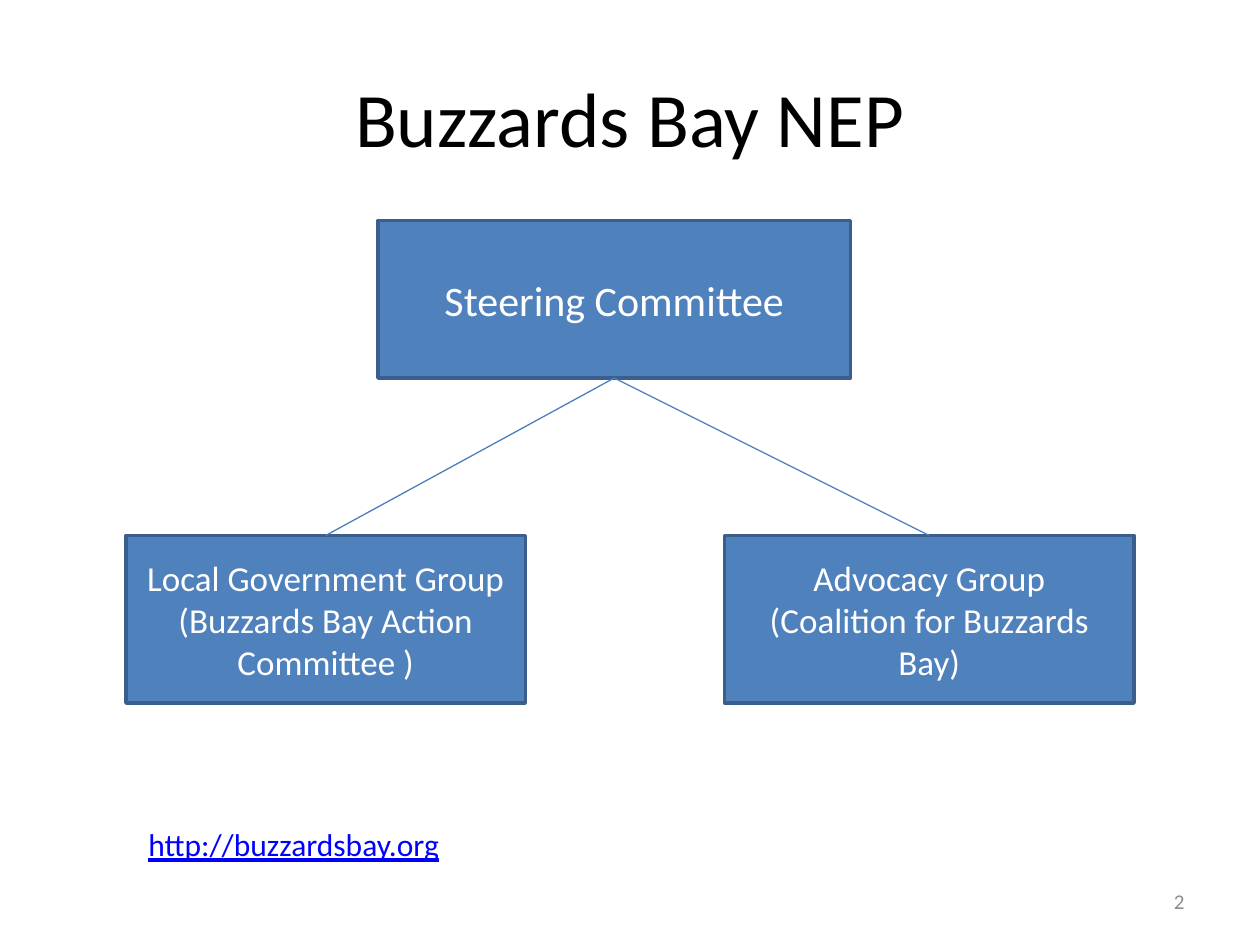
import dataclasses

import lxml.etree
import pptx
import pptx.dml.color
import pptx.enum.shapes
import pptx.enum.text
import pptx.oxml.ns
import pptx.shapes.autoshape
import pptx.slide
import pptx.util

EMU_PER_PX = 9144  # 100 px to the inch
ALIGN = pptx.enum.text.PP_ALIGN
ANCHOR = pptx.enum.text.MSO_ANCHOR
BOTTOM_SITE, TOP_SITE = 2, 0


@dataclasses.dataclass(frozen=True)
class Bounds:
    left: int
    top: int
    width: int
    height: int


@dataclasses.dataclass(frozen=True)
class Group:
    bounds: Bounds
    lines: tuple[str, ...]
    size: int


STEERING = Group(Bounds(300, 175, 375, 125), ("Steering Committee",), 24)
MEMBERS = (
    Group(Bounds(100, 425, 317, 133),
          ("Local Government Group", "(Buzzards Bay Action Committee )"), 20),
    Group(Bounds(575, 425, 325, 133),
          ("Advocacy Group", "(Coalition for Buzzards Bay)"), 20),
)


def px(length: int) -> pptx.util.Emu:
    return pptx.util.Emu(length * EMU_PER_PX)


def color(value: str) -> pptx.dml.color.RGBColor:
    return pptx.dml.color.RGBColor.from_string(value)


def place(bounds: Bounds) -> dict[str, pptx.util.Emu]:
    return {name: px(length) for name, length in dataclasses.asdict(bounds).items()}


def apply(target: object, values: dict) -> None:
    for name, value in values.items():
        setattr(target, name, value)


def write(shape, lines: tuple[str, ...], size: int, fill: str,
          align=ALIGN.CENTER, anchor=ANCHOR.MIDDLE, wrap: bool = True,
          underline: bool = False) -> None:
    frame = shape.text_frame
    apply(frame, {"text": "\n".join(lines), "word_wrap": wrap, "vertical_anchor": anchor})
    font_format = {"name": "Calibri", "size": pptx.util.Pt(size), "underline": underline}
    for paragraph in frame.paragraphs:
        paragraph.alignment = align
        for run in paragraph.runs:
            apply(run.font, font_format)
            run.font.color.rgb = color(fill)


def add_group(slide: pptx.slide.Slide, group: Group) -> pptx.shapes.autoshape.Shape:
    shape = slide.shapes.add_shape(
        pptx.enum.shapes.MSO_SHAPE.RECTANGLE, **place(group.bounds))
    shape.shadow.inherit = False
    shape.fill.solid()
    shape.fill.fore_color.rgb = color("4F81BD")
    shape.line.color.rgb = color("3A5F8C")
    shape.line.width = pptx.util.Pt(2)
    write(shape, group.lines, group.size, "FFFFFF")
    return shape


def connect(slide: pptx.slide.Slide, parent, child) -> None:
    connector = slide.shapes.add_connector(
        pptx.enum.shapes.MSO_CONNECTOR.STRAIGHT, 0, 0, 0, 0)
    connector.begin_connect(parent, BOTTOM_SITE)
    connector.end_connect(child, TOP_SITE)
    connector.line.color.rgb = color("4B7EBC")
    connector.line.width = pptx.util.Pt(0.75)
    lxml.etree.SubElement(connector._element.spPr, pptx.oxml.ns.qn("a:effectLst"))


def main() -> None:
    presentation = pptx.Presentation()
    apply(presentation, {"slide_width": px(1000), "slide_height": px(750)})
    slide = presentation.slides.add_slide(
        presentation.slide_layouts.get_by_name("Title Only"))

    title = slide.shapes.title
    apply(title, place(Bounds(50, 30, 900, 125)))
    write(title, ("Buzzards Bay NEP",), 44, "000000")

    steering = add_group(slide, STEERING)
    members = [add_group(slide, member) for member in MEMBERS]
    for member in members:
        connect(slide, steering, member)

    address = slide.shapes.add_textbox(**place(Bounds(108, 650, 254, 71)))
    write(address, ("http://buzzardsbay.org",), 18, "0000FF",
          ALIGN.LEFT, ANCHOR.TOP, wrap=False, underline=True)

    page_number = slide.shapes.add_textbox(**place(Bounds(717, 695, 233, 40)))
    write(page_number, ("2",), 12, "8C8C8C", ALIGN.RIGHT)

    presentation.save("out.pptx")


if __name__ == "__main__":
    main()
